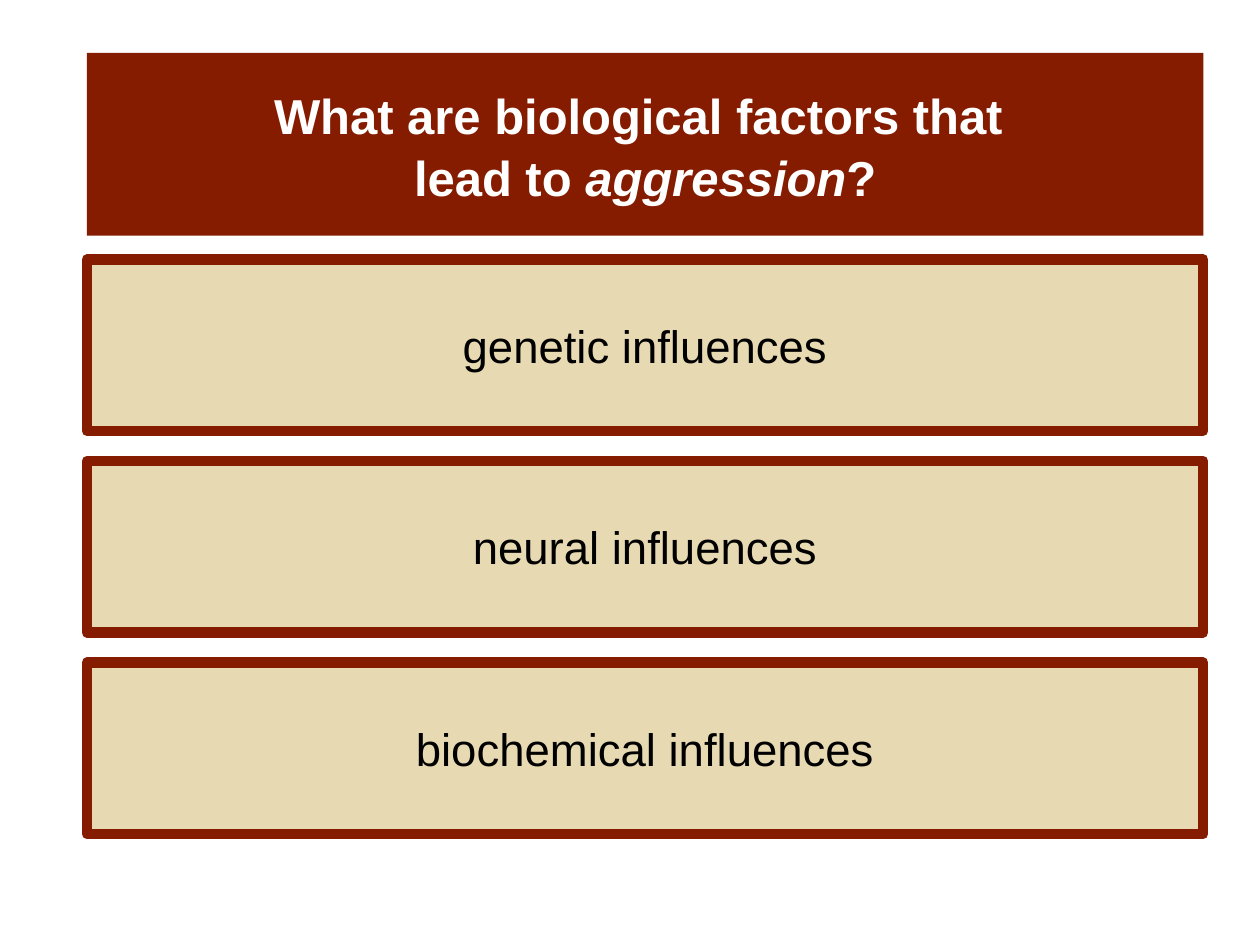
import copy
from dataclasses import dataclass

import pptx
import pptx.dml.color
import pptx.enum.shapes
import pptx.enum.text
import pptx.oxml.ns
import pptx.util
from pptx.util import Inches

MAROON = "851C00"
SAND = "E7D9B1"
WHITE = "FFFFFF"
BLACK = "000000"
LEFT, WIDTH = 0.69, 8.86
FIRST_TOP, BOX_HEIGHT, STEP = 2.06, 1.36, 1.6


@dataclass
class Influence:
    label: str
    top: float


def rgb(value: str) -> pptx.dml.color.RGBColor:
    return pptx.dml.color.RGBColor.from_string(value)


def place(shape, top: float, height: float, fill: str) -> None:
    shape.left, shape.top = Inches(LEFT), Inches(top)
    shape.width, shape.height = Inches(WIDTH), Inches(height)
    shape.fill.solid()
    shape.fill.fore_color.rgb = rgb(fill)
    frame = shape.text_frame
    frame.word_wrap = True
    frame.auto_size = pptx.enum.text.MSO_AUTO_SIZE.NONE
    frame.vertical_anchor = pptx.enum.text.MSO_ANCHOR.MIDDLE


def format_text(paragraph, size: float, color: str, bold: bool) -> None:
    paragraph.alignment = pptx.enum.text.PP_ALIGN.CENTER
    for run in paragraph.runs:
        run.font.name = "Arial"
        run.font.size = pptx.util.Pt(size)
        run.font.bold = bold
        run.font.color.rgb = rgb(color)


def draw_question(slide) -> None:
    question = slide.shapes.title
    place(question, 0.42, 1.45, MAROON)
    paragraph = question.text_frame.paragraphs[0]
    paragraph.text = "What are biological factors that \vlead to "
    topic = paragraph.add_run()
    topic.text = "aggression"
    topic.font.italic = True
    paragraph.add_run().text = "?"
    format_text(paragraph, 28, WHITE, True)
    paragraph.line_spacing = 1.05
    line_break = paragraph._p.find(pptx.oxml.ns.qn("a:br"))
    line_break.append(copy.deepcopy(paragraph.runs[0]._r.rPr))


def draw_influence(slide, influence: Influence) -> None:
    box = slide.shapes.add_shape(
        pptx.enum.shapes.MSO_SHAPE.RECTANGLE,
        Inches(LEFT), Inches(influence.top), Inches(WIDTH), Inches(BOX_HEIGHT),
    )
    box.shadow.inherit = False
    place(box, influence.top, BOX_HEIGHT, SAND)
    box.line.color.rgb = rgb(MAROON)
    box.line.width = pptx.util.Pt(6)
    box.text_frame.text = influence.label
    format_text(box.text_frame.paragraphs[0], 26, BLACK, False)


def main() -> None:
    presentation = pptx.Presentation()
    presentation.slide_width = Inches(10)
    presentation.slide_height = Inches(7.5)
    slide = presentation.slides.add_slide(presentation.slide_layouts[5])
    draw_question(slide)
    for index, kind in enumerate(("genetic", "neural", "biochemical")):
        draw_influence(slide, Influence(f"{kind} influences", FIRST_TOP + index * STEP))
    presentation.save("out.pptx")


if __name__ == "__main__":
    main()
